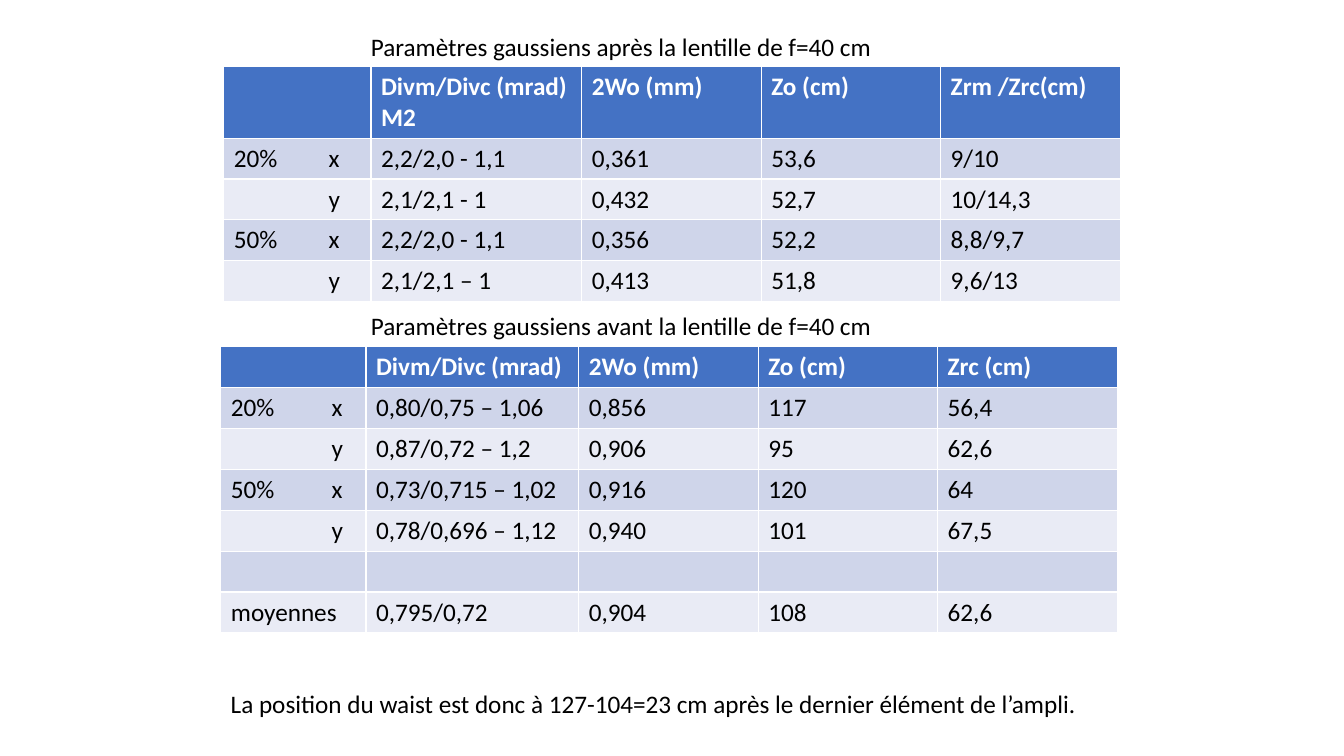
from lxml import etree
from pptx import Presentation
from pptx.dml.color import RGBColor
from pptx.enum import text
from pptx.oxml import ns
from pptx.util import Inches, Pt

HEADER_BLUE = RGBColor(0x44, 0x72, 0xC4)
BAND_DARK = RGBColor(0xCF, 0xD5, 0xEA)
BAND_LIGHT = RGBColor(0xE9, 0xEB, 0xF5)
WHITE = RGBColor(0xFF, 0xFF, 0xFF)
BLACK = RGBColor(0x00, 0x00, 0x00)

ROW_HEIGHT = Inches(2.84) // 7

AFTER_LENS = [
    ["", "Divm/Divc (mrad)\nM2", "2Wo (mm)", "Zo (cm)", "Zrm /Zrc(cm)"],
    ["20%\tx", "2,2/2,0 - 1,1", "0,361", "53,6", "9/10"],
    ["\ty", "2,1/2,1 - 1", "0,432", "52,7", "10/14,3"],
    ["50%\tx", "2,2/2,0 - 1,1", "0,356", "52,2", "8,8/9,7"],
    ["\ty", "2,1/2,1 – 1", "0,413", "51,8", "9,6/13"],
]
BEFORE_LENS = [
    ["", "Divm/Divc (mrad)", "2Wo (mm)", "Zo (cm)", "Zrc (cm)"],
    ["20%\tx", "0,80/0,75 – 1,06", "0,856", "117", "56,4"],
    ["\ty", "0,87/0,72 – 1,2", "0,906", "95", "62,6"],
    ["50%\tx", "0,73/0,715 – 1,02", "0,916", "120", "64"],
    ["\ty", "0,78/0,696 – 1,12", "0,940", "101", "67,5"],
    [""] * 5,
    ["moyennes", "0,795/0,72", "0,904", "108", "62,6"],
]


def format_paragraph(paragraph, color, bold=False):
    font = paragraph.font
    font.name = "Calibri"
    font.size = Pt(18)
    font.bold = bold
    font.color.rgb = color


def add_tab_stop(paragraph, position):
    tab_list = etree.SubElement(paragraph._p.get_or_add_pPr(), ns.qn("a:tabLst"))
    etree.SubElement(tab_list, ns.qn("a:tab"), pos=str(position), algn="l")


def add_text(slide, content, left, top, width):
    """Add one unwrapped line of text."""
    box = slide.shapes.add_textbox(left, top, width, Inches(0.4))
    frame = box.text_frame
    frame.word_wrap = False
    frame.auto_size = text.MSO_AUTO_SIZE.SHAPE_TO_FIT_TEXT
    frame.text = content
    format_paragraph(frame.paragraphs[0], BLACK)


def add_beam_table(slide, rows, left, top, first_widths, axis_tab):
    """Add a banded table; axis_tab places the x and y labels."""
    widths = [Inches(width) for width in (*first_widths, 1.78, 1.78, 1.78)]
    frame = slide.shapes.add_table(len(rows), len(widths), left, top,
                                   sum(widths), ROW_HEIGHT * len(rows))
    table = frame.table
    for column, width in zip(table.columns, widths):
        column.width = width
    for row_index, values in enumerate(rows):
        is_header = row_index == 0
        band = BAND_DARK if row_index % 2 else BAND_LIGHT
        table.rows[row_index].height = ROW_HEIGHT
        for column_index, value in enumerate(values):
            cell = table.cell(row_index, column_index)
            cell.fill.solid()
            cell.fill.fore_color.rgb = HEADER_BLUE if is_header else band
            cell.text = value
            for paragraph in cell.text_frame.paragraphs:
                if "\t" in value:
                    add_tab_stop(paragraph, axis_tab)
                format_paragraph(paragraph, WHITE if is_header else BLACK, is_header)


def main():
    presentation = Presentation()
    presentation.slide_width = Inches(13.33)
    presentation.slide_height = Inches(7.5)
    slide = presentation.slides.add_slide(presentation.slide_layouts[6])

    add_beam_table(slide, AFTER_LENS, Inches(2.22), Inches(0.66),
                   (1.46, 2.09), Inches(0.94))
    add_text(slide, "Paramètres gaussiens après la lentille de f=40 cm",
             Inches(3.58), Inches(0.26), Inches(5.22))
    add_text(slide, "Paramètres gaussiens avant la lentille de f=40 cm",
             Inches(3.58), Inches(3.03), Inches(5.22))
    add_beam_table(slide, BEFORE_LENS, Inches(2.19), Inches(3.44),
                   (1.44, 2.11), Inches(1))
    add_text(slide, "La position du waist est donc à 127-104=23 cm "
             "après le dernier élément de l’ampli.",
             Inches(2.19), Inches(6.78), Inches(8.63))

    presentation.save("out.pptx")


if __name__ == "__main__":
    main()
